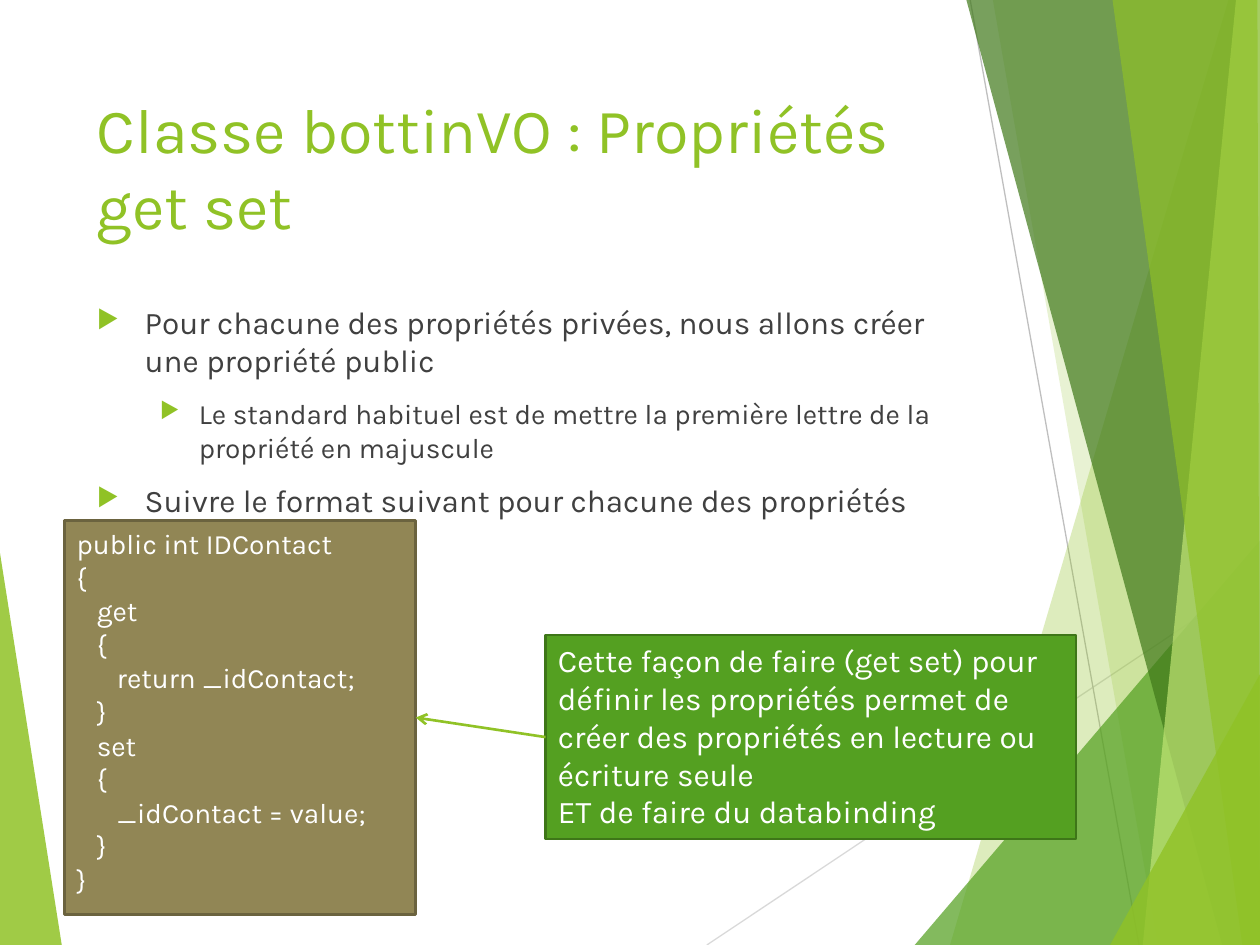
from lxml import etree
from pptx import Presentation
from pptx.dml.color import RGBColor
from pptx.enum.shapes import MSO_CONNECTOR, MSO_SHAPE
from pptx.enum.text import MSO_ANCHOR, PP_ALIGN
from pptx.oxml.ns import qn
from pptx.util import Inches, Pt

STRAIGHT, RECT = MSO_CONNECTOR.STRAIGHT, MSO_SHAPE.RECTANGLE
TOP, LEFT = MSO_ANCHOR.TOP, PP_ALIGN.LEFT

LIME = RGBColor(0x90, 0xC2, 0x26)
GREEN = RGBColor(0x54, 0xA0, 0x21)
FOREST = RGBColor(0x3F, 0x78, 0x19)
PALE = RGBColor(0xC0, 0xE4, 0x74)
NOTE_EDGE = RGBColor(0x3E, 0x76, 0x18)
OLIVE = RGBColor(0x91, 0x86, 0x55)
OLIVE_EDGE = RGBColor(0x6B, 0x63, 0x3F)
GRAY = RGBColor(0x40, 0x40, 0x40)
SILVER = RGBColor(0xBF, 0xBF, 0xBF)
LIGHT = RGBColor(0xD9, 0xD9, 0xD9)
WHITE = RGBColor(0xFF, 0xFF, 0xFF)

FONT = "Karla"
W, H = 10, 7.5

# Decor: colour, opacity in percent, corner points
LEFT_SHARD = (LIME, 85, [(0, 4.39), (0.49, H), (0, H)])
RAYS = [((5.61, H), (W, 4.57), LIGHT), ((7.7, 0), (9.04, H), SILVER)]
RIGHT_SHARDS = [
    (LIME, 30, [(9.75, 0), (7.54, H), (W, H), (W, 0)]),
    (LIME, 20, [(7.88, 0), (9.19, H), (W, H), (W, 0)]),
    (GREEN, 72, [(7.26, H), (W, 4.29), (W, H)]),
    (FOREST, 70, [(7.67, 0), (9.7, H), (W, H), (W, 0)]),
    (PALE, 70, [(9.81, 0), (9.07, H), (W, H), (W, 0)]),
    (LIME, 65, [(8.83, 0), (9.86, H), (W, H), (9.98, 0)]),
    (LIME, 80, [(8.81, H), (W, 5.35), (W, H)]),
]

TITLE = "Classe bottinVO : Propriétés get set"
BULLETS = [  # level, text
    (0, "Pour chacune des propriétés privées, nous allons créer une propriété public"),
    (1, "Le standard habituel est de mettre la première lettre de la propriété en majuscule"),
    (0, "Suivre le format suivant pour chacune des propriétés"),
]
BULLET_STYLE = [(18, 0.38, 0.38), (16, 0.81, 0.31)]  # size, margin, hanging
CODE = [  # depth, text
    (0, "public int IDContact"), (0, "{"),
    (1, "get"), (1, "{"), (2, "return _idContact;"), (1, "}"),
    (1, "set"), (1, "{"), (2, "_idContact = value;"), (1, "}"),
    (0, "}"),
]
CODE_STEP = 0.16
NOTE = [
    "Cette façon de faire (get set) pour\vdéfinir les propriétés permet de\v"
    "créer des propriétés en lecture ou\vécriture seule",
    "ET de faire du databinding",
]


def add_xml(parent, tag, **attrs):
    return etree.SubElement(parent, qn(tag), attrs)


def add_shard(s, color, opacity, points):
    pts = [(Inches(x), Inches(y)) for x, y in points]
    fb = s.shapes.build_freeform(*pts[0])
    fb.add_line_segments(pts[1:], close=True)
    sp = fb.convert_to_shape()
    sp.shadow.inherit = False
    sp.fill.solid()
    sp.fill.fore_color.rgb = color
    sp.line.fill.background()
    srgb = sp.fill._xPr.find(".//" + qn("a:srgbClr"))
    add_xml(srgb, "a:alpha", val=str(opacity * 1000))


def add_line(s, start, end, color, width):
    cx = s.shapes.add_connector(STRAIGHT, *map(Inches, start + end))
    cx.line.color.rgb = color
    cx.line.width = Pt(width)
    add_xml(cx._element.spPr, "a:effectLst")
    return cx


def add_box(s, box, fill, edge):
    sp = s.shapes.add_shape(RECT, *map(Inches, box))
    sp.shadow.inherit = False
    sp.fill.solid()
    sp.fill.fore_color.rgb = fill
    sp.line.color.rgb = edge
    sp.line.width = Pt(1.5)
    return sp


def write(sp, items, color):
    """Fill a shape with (text, size, margin, hanging) paragraphs."""
    tf = sp.text_frame
    tf.word_wrap = True
    tf.vertical_anchor = TOP
    for i, (text, size, margin, hanging) in enumerate(items):
        p = tf.add_paragraph() if i else tf.paragraphs[0]
        p.text = text
        p.alignment = LEFT
        pPr = p._p.get_or_add_pPr()
        pPr.set("marL", str(Inches(margin)))
        pPr.set("indent", str(-Inches(hanging)))
        for r in p.runs:
            r.font.name = FONT
            r.font.size = Pt(size)
            r.font.color.rgb = color


def add_bullet(p, level):
    p.level = level
    p.space_before = Pt(10)
    pPr = p._p.get_or_add_pPr()
    add_xml(add_xml(pPr, "a:buClr"), "a:srgbClr", val=str(LIME))
    add_xml(pPr, "a:buSzPct", val="80000")
    add_xml(pPr, "a:buChar", char="▶")


def main():
    prs = Presentation()
    prs.slide_width, prs.slide_height = Inches(W), Inches(H)
    s = prs.slides.add_slide(prs.slide_layouts[6])

    add_shard(s, *LEFT_SHARD)
    for start, end, color in RAYS:
        add_line(s, start, end, color, 0.75)
    for shard in RIGHT_SHARDS:
        add_shard(s, *shard)

    title = s.shapes.add_textbox(*map(Inches, (0.67, 0.67, 6.94, 1.44)))
    write(title, [(TITLE, 36, 0, 0)], LIME)

    body = s.shapes.add_textbox(*map(Inches, (0.67, 2.36, 6.94, 4.24)))
    write(body, [(text, *BULLET_STYLE[level]) for level, text in BULLETS], GRAY)
    for p, (level, _) in zip(body.text_frame.paragraphs, BULLETS):
        add_bullet(p, level)

    code = add_box(s, (0.51, 4.13, 2.79, 3.13), OLIVE, OLIVE_EDGE)
    write(code, [(text, 16, depth * CODE_STEP, 0) for depth, text in CODE], WHITE)

    note = add_box(s, (4.33, 5.04, 4.21, 1.62), GREEN, NOTE_EDGE)
    write(note, [(text, 18, 0, 0) for text in NOTE], WHITE)

    arrow = add_line(s, (4.33, 5.85), (3.3, 5.7), LIME, 1.5)
    arrow.begin_connect(note, 1)
    arrow.end_connect(code, 3)
    add_xml(arrow.line._get_or_add_ln(), "a:tailEnd", type="arrow")

    prs.save("out.pptx")


if __name__ == "__main__":
    main()
